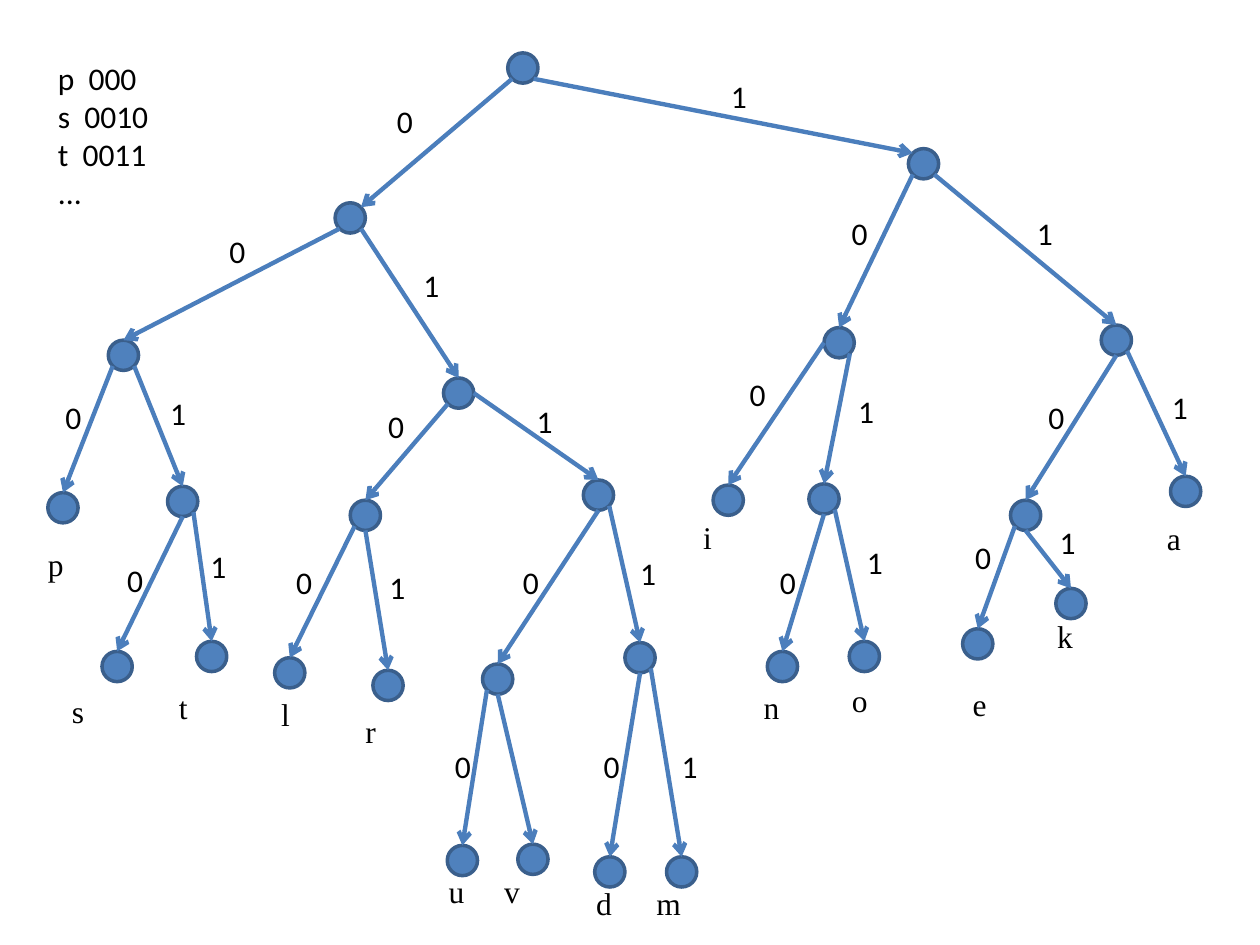
import pptx
import pptx.util
import pptx.dml.color
import pptx.enum.shapes
import pptx.oxml
import pptx.oxml.ns
from pptx.util import Inches

# Nodes by code: the last bit is the branch taken from the parent
nodes = {
    "": (4.03, 0.42),
    "0": (2.66, 1.61), "1": (7.21, 1.18),
    "00": (0.86, 2.7), "01": (3.52, 3), "10": (6.54, 2.6), "11": (8.74, 2.58),
    "000": (0.38, 3.91), "001": (1.33, 3.86),
    "010": (2.78, 3.97), "011": (4.63, 3.81),
    "100": (5.66, 3.85), "101": (6.42, 3.84),
    "110": (8.02, 3.97), "111": (9.29, 3.78),
    "0010": (0.81, 5.17), "0011": (1.56, 5.09),
    "0100": (2.18, 5.22), "0101": (2.96, 5.32),
    "0110": (3.83, 5.27), "0111": (4.96, 5.1),
    "1010": (6.09, 5.17), "1011": (6.74, 5.09),
    "1100": (7.64, 4.99), "1101": (8.38, 4.67),
    "01100": (3.55, 6.71), "01101": (4.11, 6.7),
    "01110": (4.72, 6.8), "01111": (5.29, 6.8),
}

# Where an edge leaves its parent (else SW for 0, SE for 1) or enters (else N)
leave = {"011": "E", "100": "W", "110": "S", "0010": "S", "0101": "S",
         "0110": "S", "1010": "S", "1101": "S", "01101": "S", "01110": "S"}
enter = {"0": "NE", "1": "NW"}

# Places of the bit labels, by the code of the child
bits = {
    "0": (3.08, 0.76), "00": (1.75, 1.79), "000": (0.45, 3.11),
    "0010": (0.94, 4.4), "010": (3.01, 3.18), "0100": (2.28, 4.42),
    "0110": (4.08, 4.42), "01100": (3.54, 5.88), "01110": (4.72, 5.88),
    "10": (6.69, 1.65), "100": (5.88, 2.93), "1010": (6.12, 4.42),
    "110": (8.25, 3.11), "1100": (7.67, 4.22),
    "1": (5.73, 0.56), "11": (8.16, 1.65), "111": (9.23, 3.03),
    "1101": (8.34, 4.1), "101": (6.74, 3.06), "1011": (6.81, 4.26),
    "01": (3.29, 2.06), "011": (4.19, 3.14), "0111": (5.01, 4.35),
    "01111": (5.34, 5.88), "001": (1.28, 3.08), "0011": (1.6, 4.29),
    "0101": (3.02, 4.46),
}

# Leaf letters: text, left, top
leaves = [
    ("p", 0.29, 4.28), ("i", 5.49, 4.06), ("a", 9.17, 4.07),
    ("s", 0.48, 5.44), ("t", 1.33, 5.41), ("l", 2.14, 5.47),
    ("r", 2.81, 5.6), ("e", 7.63, 5.39), ("k", 8.3, 4.85),
    ("n", 5.97, 5.41), ("o", 6.67, 5.36), ("d", 4.64, 6.97),
    ("m", 5.12, 6.97), ("u", 3.47, 6.87), ("v", 3.91, 6.87),
]
codes = ["p  000", "s  0010", "t  0011", "..."]

theme = {"fill": "4F81BD", "rim": "3A5F8C", "edge": "4B7EBC", "ink": "000000",
         "size": 18, "sans": "Calibri", "serif": "Times New Roman"}
size = 0.24
diag = size / 2 * 0.71
sites = {"N": (0, -size / 2), "S": (0, size / 2),
         "W": (-size / 2, 0), "E": (size / 2, 0),
         "NW": (-diag, -diag), "NE": (diag, -diag),
         "SW": (-diag, diag), "SE": (diag, diag)}


def color(key):
    return pptx.dml.color.RGBColor.from_string(theme[key])


def point(code, site):
    x, y = nodes[code]
    dx, dy = sites[site]
    return Inches(x + size / 2 + dx), Inches(y + size / 2 + dy)


def edge(slide, code):
    start = point(code[:-1], leave.get(code, "SW" if code[-1] == "0" else "SE"))
    end = point(code, enter.get(code, "N"))
    line = slide.shapes.add_connector(
        pptx.enum.shapes.MSO_CONNECTOR.STRAIGHT, *start, *end)
    line.line.color.rgb = color("edge")
    line.line.width = pptx.util.Pt(2.5)
    props = line._element.spPr
    tail = pptx.oxml.parse_xml(
        f'<a:tailEnd {pptx.oxml.ns.nsdecls("a")} type="arrow"/>')
    line.line._get_or_add_ln().append(tail)
    props.append(pptx.oxml.parse_xml(
        f'<a:effectLst {pptx.oxml.ns.nsdecls("a")}/>'))


def node(slide, x, y):
    dot = slide.shapes.add_shape(
        pptx.enum.shapes.MSO_SHAPE.OVAL,
        Inches(x), Inches(y), Inches(size), Inches(size))
    dot.shadow.inherit = False
    dot.fill.solid()
    dot.fill.fore_color.rgb = color("fill")
    dot.line.color.rgb = color("rim")
    dot.line.width = pptx.util.Pt(2)


def label(slide, lines, x, y, width, height, face, inset):
    box = slide.shapes.add_textbox(
        Inches(x), Inches(y), Inches(width), Inches(height))
    frame = box.text_frame
    frame.word_wrap = True
    frame.margin_left, frame.margin_right = Inches(inset), 0
    frame.text = "\n".join(lines)
    for para in frame.paragraphs:
        para.font.name = theme[face]
        para.font.size = pptx.util.Pt(theme["size"])
        para.font.color.rgb = color("ink")


def main():
    deck = pptx.Presentation()
    deck.slide_width, deck.slide_height = Inches(10), Inches(7.5)
    slide = deck.slides.add_slide(deck.slide_layouts[6])

    # Tree
    for code, (x, y) in nodes.items():
        node(slide, x, y)
        if code:
            edge(slide, code)

    # Leaf letters and branch bits
    for text, x, y in leaves:
        label(slide, [text], x, y, 0.55, 0.4, "serif", 0.09)
    for code, (x, y) in bits.items():
        label(slide, [code[-1]], x, y, 0.17, 0.4, "sans", 0.07)

    # Code list
    label(slide, codes, 0.38, 0.42, 1.7, 1.31, "sans", 0.08)
    deck.save("out.pptx")


if __name__ == "__main__":
    main()
